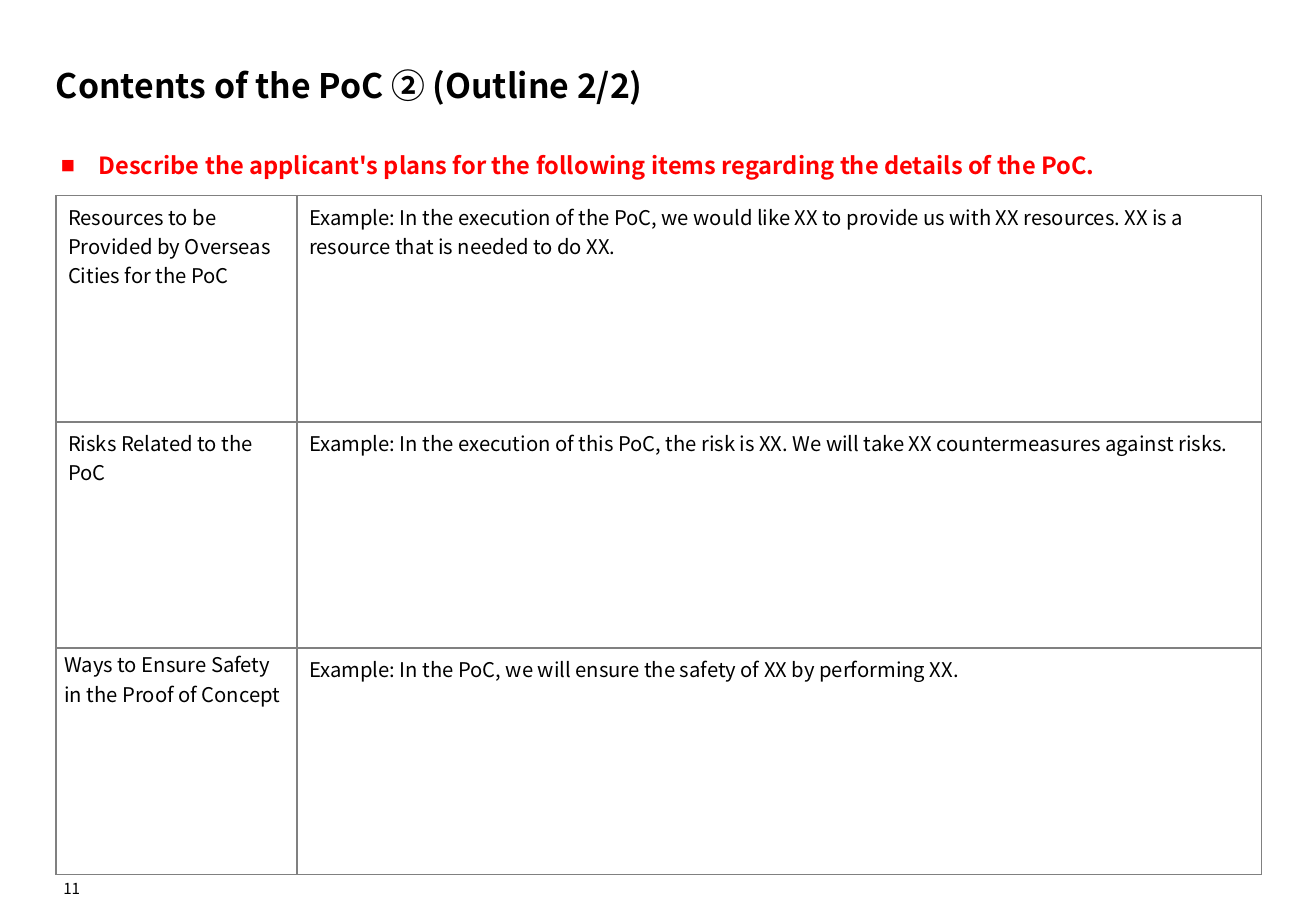
from lxml.etree import SubElement
from pptx import Presentation
from pptx.dml.color import RGBColor
from pptx.enum.text import MSO_ANCHOR, MSO_AUTO_SIZE, PP_ALIGN
from pptx.oxml import parse_xml
from pptx.oxml.ns import nsdecls, qn
from pptx.util import Inches, Pt

FONT = "Noto Sans CJK JP"
COLORS = {"text": "000000", "accent": "FF0000", "border": "808080", "cell": "FFFFFF"}
WIDTH, HEIGHT = 10.83, 7.5
LEFT, CONTENT_WIDTH = 0.46, 9.92
TABLE_TOP, TABLE_HEIGHT = 1.61, 5.59
LABEL_SHARE = 0.2  # label column, as a share of the table width

ROWS = [
    (["Resources to be Provided by Overseas Cities for the PoC"],
     "Example: In the execution of the PoC, we would like XX to provide us with XX resources. "
     "XX is a resource that is needed to do XX."),
    (["Risks Related to the PoC"],
     "Example: In the execution of this PoC, the risk is XX. "
     "We will take XX countermeasures against risks."),
    (["Ways to Ensure Safety ", "in the Proof of Concept"],
     "Example: In the PoC, we will ensure the safety of XX by performing XX."),
]


def style(paragraph, size, color="text", bold=False):
    font = paragraph.font
    font.size, font.bold, font.name = Pt(size), bold, FONT
    font.color.rgb = RGBColor.from_string(COLORS[color])
    properties = paragraph._p.pPr.find(qn("a:defRPr"))
    SubElement(properties, qn("a:ea"), typeface=FONT)


def set_frame(frame, anchor, inset, wrap=True):
    frame.word_wrap, frame.vertical_anchor = wrap, anchor
    frame.auto_size = MSO_AUTO_SIZE.NONE
    frame.margin_left = frame.margin_right = Inches(inset)
    frame.margin_top = frame.margin_bottom = Inches(inset)


def hang(paragraph, indent):
    properties = paragraph._p.get_or_add_pPr()
    properties.set("marL", str(Inches(indent)))
    properties.set("indent", str(-Inches(indent)))
    return properties


def place_title(slide, left, top, width, height):
    title = slide.shapes.title
    title.left, title.top = Inches(left), Inches(top)
    title.width, title.height = Inches(width), Inches(height)
    set_frame(title.text_frame, MSO_ANCHOR.BOTTOM, 0)
    title.text_frame.text = "Contents of the PoC ② (Outline 2/2)"
    paragraph = title.text_frame.paragraphs[0]
    paragraph.alignment = PP_ALIGN.LEFT
    style(paragraph, 20, bold=True)


def add_text(slide, text, box, anchor, inset, wrap=True):
    shape = slide.shapes.add_textbox(*map(Inches, box))
    set_frame(shape.text_frame, anchor, inset, wrap)
    paragraph = shape.text_frame.paragraphs[0]
    paragraph.text = text
    return paragraph


def add_instruction(slide, *box):
    paragraph = add_text(
        slide, "Describe the applicant's plans for the following items regarding the details of the PoC.",
        box, MSO_ANCHOR.MIDDLE, 0.04)
    properties = hang(paragraph, 0.31)
    SubElement(properties, qn("a:buSzPct"), val="60000")
    SubElement(properties, qn("a:buFont"), typeface=FONT)
    SubElement(properties, qn("a:buChar"), char="■")
    style(paragraph, 14, "accent", bold=True)


def add_page_number(slide, *box):
    paragraph = add_text(slide, "11", box, MSO_ANCHOR.BOTTOM, 0, wrap=False)
    paragraph.alignment = PP_ALIGN.RIGHT
    style(paragraph, 9)


def fill_cell(cell, lines):
    cell.fill.solid()
    cell.fill.fore_color.rgb = RGBColor.from_string(COLORS["cell"])
    for position, side in enumerate(("lnL", "lnR", "lnT", "lnB")):
        cell._tc.get_or_add_tcPr().insert(position, parse_xml(
            f'<a:{side} {nsdecls("a")} w="{Pt(1)}"><a:solidFill>'
            f'<a:srgbClr val="{COLORS["border"]}"/></a:solidFill></a:{side}>'))
    cell.text_frame.text = "\n".join(lines)
    for paragraph in cell.text_frame.paragraphs:
        if len(lines) > 1:
            hang(paragraph, 0.15)
            paragraph.alignment = PP_ALIGN.JUSTIFY
            paragraph.line_spacing = Pt(18)
        style(paragraph, 12)
    if len(lines) > 1:
        cell.margin_left = cell.margin_right = Inches(0.07)
        cell.margin_top = cell.margin_bottom = 0


def add_plan_table(slide, left, top, width, height):
    table = slide.shapes.add_table(
        len(ROWS), 2, Inches(left), Inches(top), Inches(width), Inches(height)).table
    table.first_row = table.horz_banding = False
    for column, share in zip(table.columns, (LABEL_SHARE, 1 - LABEL_SHARE)):
        column.width = Inches(width * share)
    for index, (label, example) in enumerate(ROWS):
        table.rows[index].height = Inches(height / len(ROWS))
        fill_cell(table.cell(index, 0), label)
        fill_cell(table.cell(index, 1), [example])


def main():
    presentation = Presentation()
    presentation.slide_width, presentation.slide_height = Inches(WIDTH), Inches(HEIGHT)
    slide = presentation.slides.add_slide(presentation.slide_layouts[5])
    place_title(slide, LEFT, 0.2, CONTENT_WIDTH, 0.67)
    add_instruction(slide, LEFT, TABLE_TOP - 0.5, CONTENT_WIDTH, 0.5)
    add_plan_table(slide, LEFT, TABLE_TOP, CONTENT_WIDTH, TABLE_HEIGHT)
    add_page_number(slide, LEFT, TABLE_TOP + TABLE_HEIGHT, 0.2, 0.19)
    presentation.save("out.pptx")


if __name__ == "__main__":
    main()
